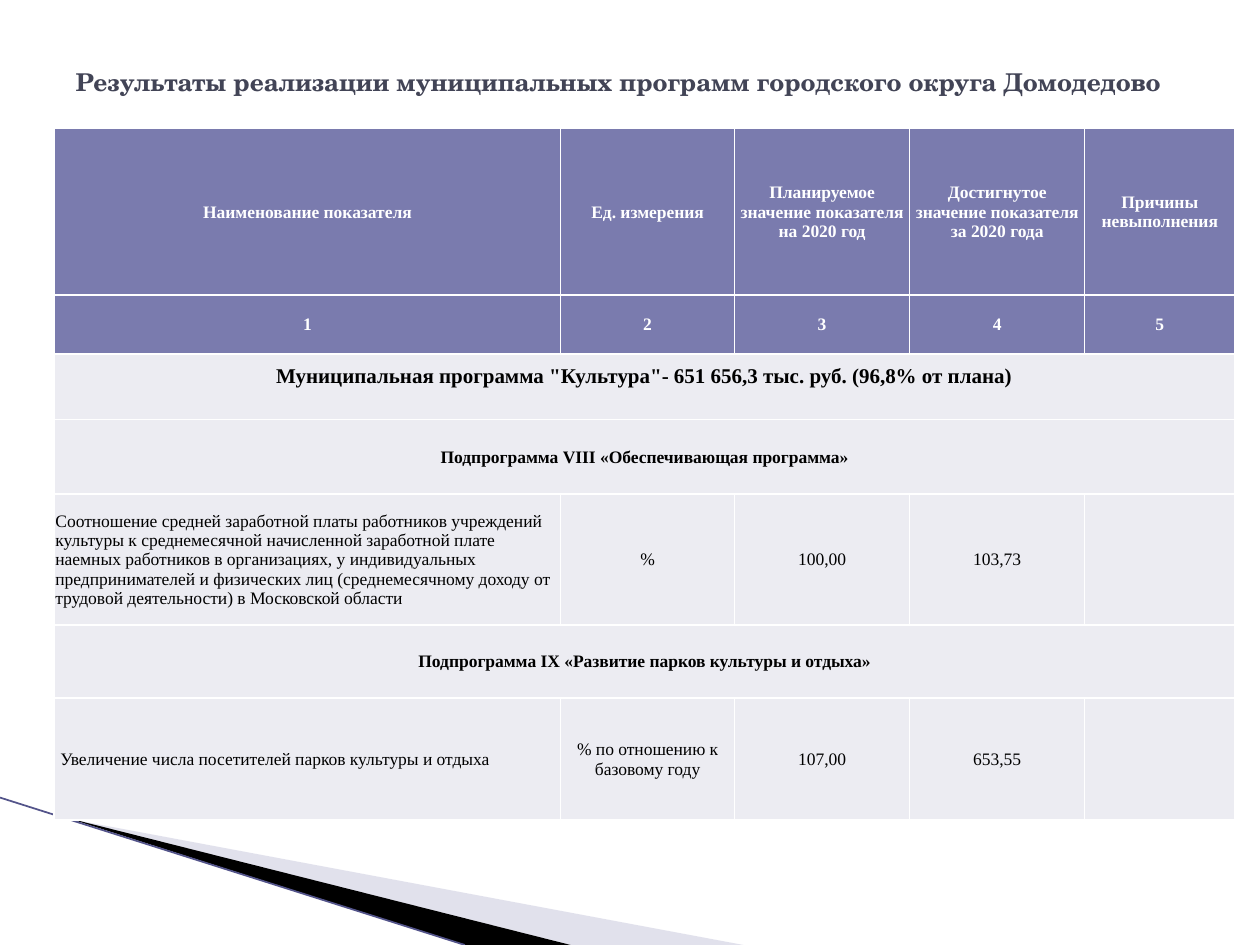
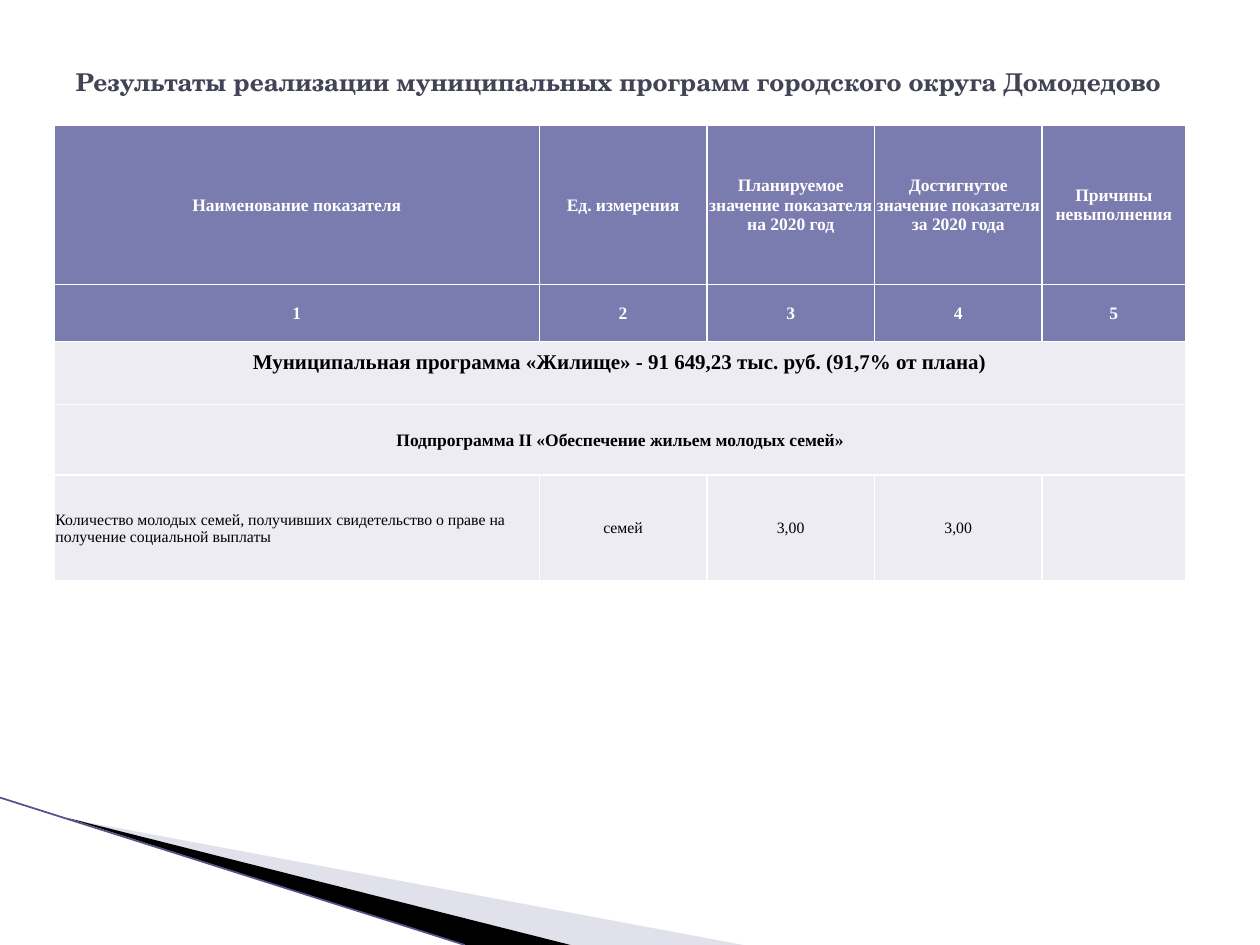
from dataclasses import dataclass

from lxml import etree
from pptx import Presentation
from pptx.dml.color import RGBColor
from pptx.enum.shapes import MSO_CONNECTOR
from pptx.enum.text import MSO_ANCHOR, PP_ALIGN
from pptx.oxml.ns import qn
from pptx.util import Inches, Pt

STRAIGHT = MSO_CONNECTOR.STRAIGHT
MIDDLE = MSO_ANCHOR.MIDDLE
LEFT, CENTER = PP_ALIGN.LEFT, PP_ALIGN.CENTER


@dataclass(frozen=True)
class Theme:
    title_font: str = "TeX Gyre Schola"
    body_font: str = "Times New Roman"
    title_color: str = "424456"
    header_fill: str = "7A7BAE"
    body_fill: str = "ECECF2"
    white: str = "FFFFFF"
    black: str = "000000"
    pale_wedge: str = "B6B6D1"
    edge: str = "53548A"
    title_size: float = 14
    program_size: float = 12
    body_size: float = 10
    small_size: float = 9


TITLE = "Результаты реализации муниципальных программ городского округа Домодедово"
HEADERS = [
    ("Наименование показателя", "Ед. измерения",
     "Планируемое значение показателя на 2020 год",
     "Достигнутое значение показателя за 2020 года",
     "Причины невыполнения"),
    ("1", "2", "3", "4", "5"),
]


class ReportDeck:
    def __init__(self, theme):
        self.theme = theme
        self.presentation = Presentation()
        self.presentation.slide_width = Inches(10)
        self.presentation.slide_height = Inches(7.5)
        self.slide = None

    def add_slide(self):
        layout = self.presentation.slide_layouts[5]
        self.slide = self.presentation.slides.add_slide(layout)
        self.add_corner_band()
        self.add_title(TITLE)

    def style_text(self, paragraph, font_name, size, color, bold, alignment):
        paragraph.alignment = alignment
        for run in paragraph.runs:
            run.font.name = font_name
            run.font.size = Pt(size)
            run.font.bold = bold
            run.font.color.rgb = RGBColor.from_string(color)

    def add_title(self, text):
        title = self.slide.shapes.title
        title.left, title.top = Inches(0.5), Inches(0.3)
        title.width, title.height = Inches(9), Inches(0.69)
        frame = title.text_frame
        frame.text = text
        frame.word_wrap = True
        frame.vertical_anchor = MIDDLE
        self.style_text(frame.paragraphs[0], self.theme.title_font,
                        self.theme.title_size, self.theme.title_color, True, LEFT)

    def add_wedge(self, points, color, opacity=100):
        start, *others = [(Inches(x), Inches(y)) for x, y in points]
        builder = self.slide.shapes.build_freeform(*start)
        builder.add_line_segments(others)
        wedge = builder.convert_to_shape()
        wedge.shadow.inherit = False
        wedge.line.fill.background()
        wedge.fill.solid()
        wedge.fill.fore_color.rgb = RGBColor.from_string(color)
        if opacity < 100:
            color_element = wedge.fill._xPr.find(qn("a:solidFill"))[0]
            alpha = etree.SubElement(color_element, qn("a:alpha"))
            alpha.set("val", str(opacity * 1000))

    def add_line(self, start, end, color, width):
        ends = [Inches(value) for value in (*start, *end)]
        line = self.slide.shapes.add_connector(STRAIGHT, *ends)
        line.line.color.rgb = RGBColor.from_string(color)
        line.line.width = Pt(width)
        etree.SubElement(line._element.spPr, qn("a:effectLst"))

    def add_corner_band(self):
        self.add_wedge([(0.55, 6.5), (5.9, 7.5), (4.53, 7.5)],
                       self.theme.pale_wedge, opacity=40)
        self.add_wedge([(0.53, 6.49), (4.53, 7.5), (3.69, 7.5)], self.theme.black)
        self.add_line((0, 6.33), (3.69, 7.5), self.theme.edge, 1)

    def format_cell(self, cell, fill):
        properties = cell._tc.get_or_add_tcPr()
        for side in ("a:lnL", "a:lnR", "a:lnT", "a:lnB"):
            border = etree.SubElement(properties, qn(side), w=str(Pt(1)))
            solid = etree.SubElement(border, qn("a:solidFill"))
            etree.SubElement(solid, qn("a:srgbClr"), val=self.theme.white)
        cell.fill.solid()
        cell.fill.fore_color.rgb = RGBColor.from_string(fill)
        cell.vertical_anchor = MIDDLE
        cell.margin_left = cell.margin_right = cell.margin_top = Inches(0.01)
        cell.margin_bottom = 0

    def write_cell(self, cell, text, size, color, bold, alignment):
        cell.text_frame.text = text
        self.style_text(cell.text_frame.paragraphs[0], self.theme.body_font,
                        size, color, bold, alignment)

    def add_indicator_table(self, top, column_widths, row_heights, program,
                            body_rows, indicator_size):
        """Body rows hold five values, or one subprogram heading."""
        theme = self.theme
        rows = [*HEADERS, (program,), *body_rows]
        program_row = len(HEADERS)
        table = self.slide.shapes.add_table(
            len(rows), len(column_widths), Inches(0.43), Inches(top),
            Inches(sum(column_widths)), Inches(sum(row_heights))).table
        table.first_row = table.horz_banding = False
        for column, width in zip(table.columns, column_widths):
            column.width = Inches(width)
        for row, height in zip(table.rows, row_heights):
            row.height = Inches(height)

        for row_index, values in enumerate(rows):
            is_header = row_index < program_row
            is_section = len(values) == 1
            fill = theme.header_fill if is_header else theme.body_fill
            color = theme.white if is_header else theme.black
            bold = is_header or is_section
            if row_index == program_row:
                size = theme.program_size
            else:
                size = theme.body_size if bold else indicator_size
            cells = list(table.rows[row_index].cells)
            for cell in cells:
                self.format_cell(cell, fill)
            if is_section:
                cells[0].merge(cells[-1])
            for column_index, (cell, text) in enumerate(zip(cells, values)):
                alignment = LEFT if column_index == 0 and not bold else CENTER
                self.write_cell(cell, text, size, color, bold, alignment)
        # The program heading sits above the middle of its row
        table.cell(program_row, 0).margin_bottom = Inches(0.17)
        return table


def main():
    theme = Theme()
    deck = ReportDeck(theme)

    # Culture program
    deck.add_slide()
    culture_table = deck.add_indicator_table(
        top=1.02,
        column_widths=[4.02, 1.38, 1.39, 1.39, 1.19],
        row_heights=[1.32, 0.47, 0.52, 0.59, 1.04, 0.58, 0.97],
        program='Муниципальная программа "Культура"- 651 656,3 тыс. руб. (96,8% от плана)',
        body_rows=[
            ("Подпрограмма VIII «Обеспечивающая программа»",),
            ("Соотношение средней заработной платы работников учреждений культуры "
             "к среднемесячной начисленной заработной плате наемных работников "
             "в организациях, у индивидуальных предпринимателей и физических лиц "
             "(среднемесячному доходу от трудовой деятельности) в Московской области",
             "%", "100,00", "103,73", ""),
            ("Подпрограмма IX «Развитие парков культуры и отдыха»",),
            ("Увеличение числа посетителей парков культуры и отдыха",
             "% по отношению к базовому году", "107,00", "653,55", ""),
        ],
        indicator_size=theme.body_size)
    culture_table.cell(6, 0).margin_left = Inches(0.05)

    # Housing program
    deck.add_slide()
    deck.add_indicator_table(
        top=0.99,
        column_widths=[3.85, 1.33, 1.33, 1.33, 1.14],
        row_heights=[1.27, 0.45, 0.5, 0.56, 0.84],
        program="Муниципальная программа «Жилище» - 91 649,23 тыс. руб. (91,7% от плана)",
        body_rows=[
            ("Подпрограмма II «Обеспечение жильем молодых семей»",),
            ("Количество молодых семей, получивших свидетельство о праве на "
             "получение социальной выплаты", "семей", "3,00", "3,00", ""),
        ],
        indicator_size=theme.small_size)

    deck.presentation.save("out.pptx")


if __name__ == "__main__":
    main()
